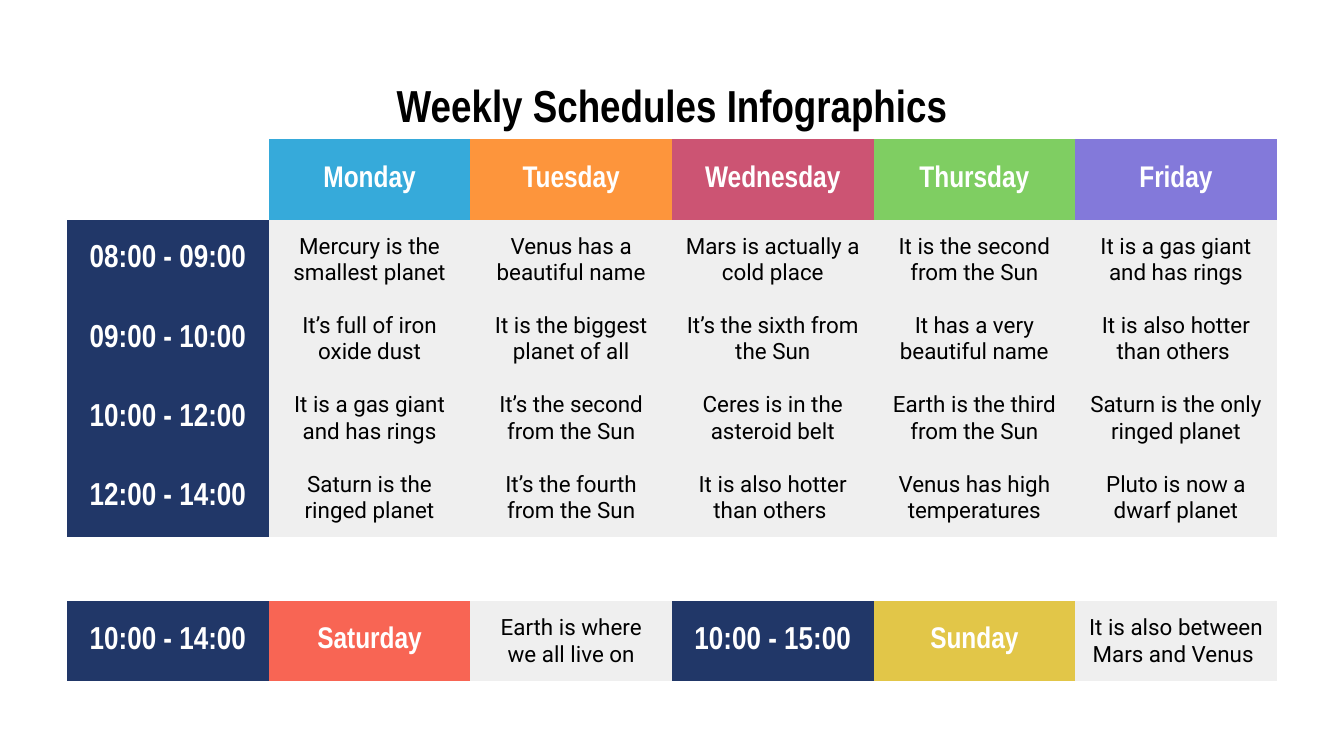
"""Build a weekly schedule slide with one coloured timetable."""
from pptx import Presentation
from pptx.dml.color import RGBColor
from pptx.enum.text import MSO_ANCHOR, PP_ALIGN
from pptx.oxml.ns import qn
from pptx.util import Pt

CENTER = PP_ALIGN.CENTER
MIDDLE, BOTTOM = MSO_ANCHOR.MIDDLE, MSO_ANCHOR.BOTTOM
EMU_PER_PX = 914400 // 200
TITLE_ONLY = 5
NO_STYLE = "{2D5ABB26-0587-4C30-8999-92F81FD0307C}"
BLACK, WHITE, NAVY, GREY = "000000", "FFFFFF", "213768", "EFEFEF"

DAYS = [("Monday", "36AADA"), ("Tuesday", "FD953C"), ("Wednesday", "CC5473"),
        ("Thursday", "7FCE62"), ("Friday", "8379DA")]
LESSONS = {
    "08:00 - 09:00": ["Mercury is the smallest planet", "Venus has a beautiful name",
                      "Mars is actually a cold place", "It is the second from the Sun",
                      "It is a gas giant and has rings"],
    "09:00 - 10:00": ["It’s full of iron oxide dust", "It is the biggest planet of all",
                      "It’s the sixth from the Sun", "It has a very beautiful name",
                      "It is also hotter than others "],
    "10:00 - 12:00": ["It is a gas giant and has rings", "It’s the second from the Sun",
                      "Ceres is in the asteroid belt", "Earth is the third from the Sun",
                      "Saturn is the only ringed planet"],
    "12:00 - 14:00": ["Saturn is the ringed planet", "It’s the fourth from the Sun",
                      "It is also hotter than others ", "Venus has high temperatures",
                      "Pluto is now a dwarf planet"],
}
WEEKEND = [("10:00 - 14:00", "Saturday", "F86554", "Earth is where we all live on"),
           ("10:00 - 15:00", "Sunday", "E2C648", "It is also between Mars and Venus ")]
COLUMN_WIDTH = 300
ROW_HEIGHTS = [120] + [118] * len(LESSONS) + [95, 119]


def px(length):
    return length * EMU_PER_PX


def color(hex_code):
    return RGBColor.from_string(hex_code)


class ScheduleSlide:
    """Hold the style and the current slide."""

    heading_font, body_font = "Arial Narrow", "Roboto"
    inset = px(20)

    def __init__(self, presentation):
        self.slide = presentation.slides.add_slide(presentation.slide_layouts[TITLE_ONLY])

    def label(self, frame, text, size, hex_code, heading=True):
        frame.text = text
        paragraph = frame.paragraphs[0]
        paragraph.alignment = CENTER
        font = paragraph.runs[0].font
        font.name = self.heading_font if heading else self.body_font
        font.size, font.bold = Pt(size), heading
        font.color.rgb = color(hex_code)

    def pad(self, box, inset):
        box.margin_left = box.margin_right = inset
        box.margin_top = box.margin_bottom = inset

    def title(self, text, left, top, width, height):
        title = self.slide.shapes.title
        title.left, title.top = px(left), px(top)
        title.width, title.height = px(width), px(height)
        frame = title.text_frame
        self.pad(frame, self.inset)
        frame.vertical_anchor = BOTTOM
        self.label(frame, text, 24, BLACK)

    def table(self, rows, left, top):
        columns = len(rows[0])
        table = self.slide.shapes.add_table(
            len(rows), columns, px(left), px(top),
            px(COLUMN_WIDTH * columns), px(sum(ROW_HEIGHTS))).table
        table.first_row = table.horz_banding = False
        table._tbl.tblPr.find(qn("a:tableStyleId")).text = NO_STYLE
        for row, height in zip(table.rows, ROW_HEIGHTS):
            row.height = px(height)
        for row, entries in zip(table.rows, rows):
            for cell, entry in zip(row.cells, entries):
                self.cell(cell, entry)

    def cell(self, cell, entry):
        if entry is None:
            self.pad(cell, 0)
            cell.fill.background()
            return
        text, size, fill = entry
        self.pad(cell, self.inset)
        cell.vertical_anchor = MIDDLE
        cell.fill.solid()
        cell.fill.fore_color.rgb = color(fill)
        heading = fill != GREY
        self.label(cell.text_frame, text, size, WHITE if heading else BLACK, heading)


def day(name, fill):
    return name, 16, fill


def hours(text):
    return text, 17, NAVY


def note(text):
    return text, 12, GREY


def schedule_rows():
    header = [None] + [day(*weekday) for weekday in DAYS]
    lessons = [[hours(time)] + [note(text) for text in notes]
               for time, notes in LESSONS.items()]
    gap = [None] * len(header)
    weekend = [entry for time, name, fill, text in WEEKEND
               for entry in (hours(time), day(name, fill), note(text))]
    return [header, *lessons, gap, weekend]


def main():
    presentation = Presentation()
    presentation.slide_width, presentation.slide_height = px(2000), px(1125)
    schedule = ScheduleSlide(presentation)
    schedule.title("Weekly Schedules Infographics", 100, 90, 1800, 126)
    schedule.table(schedule_rows(), 100, 207)
    presentation.save("out.pptx")


if __name__ == "__main__":
    main()
